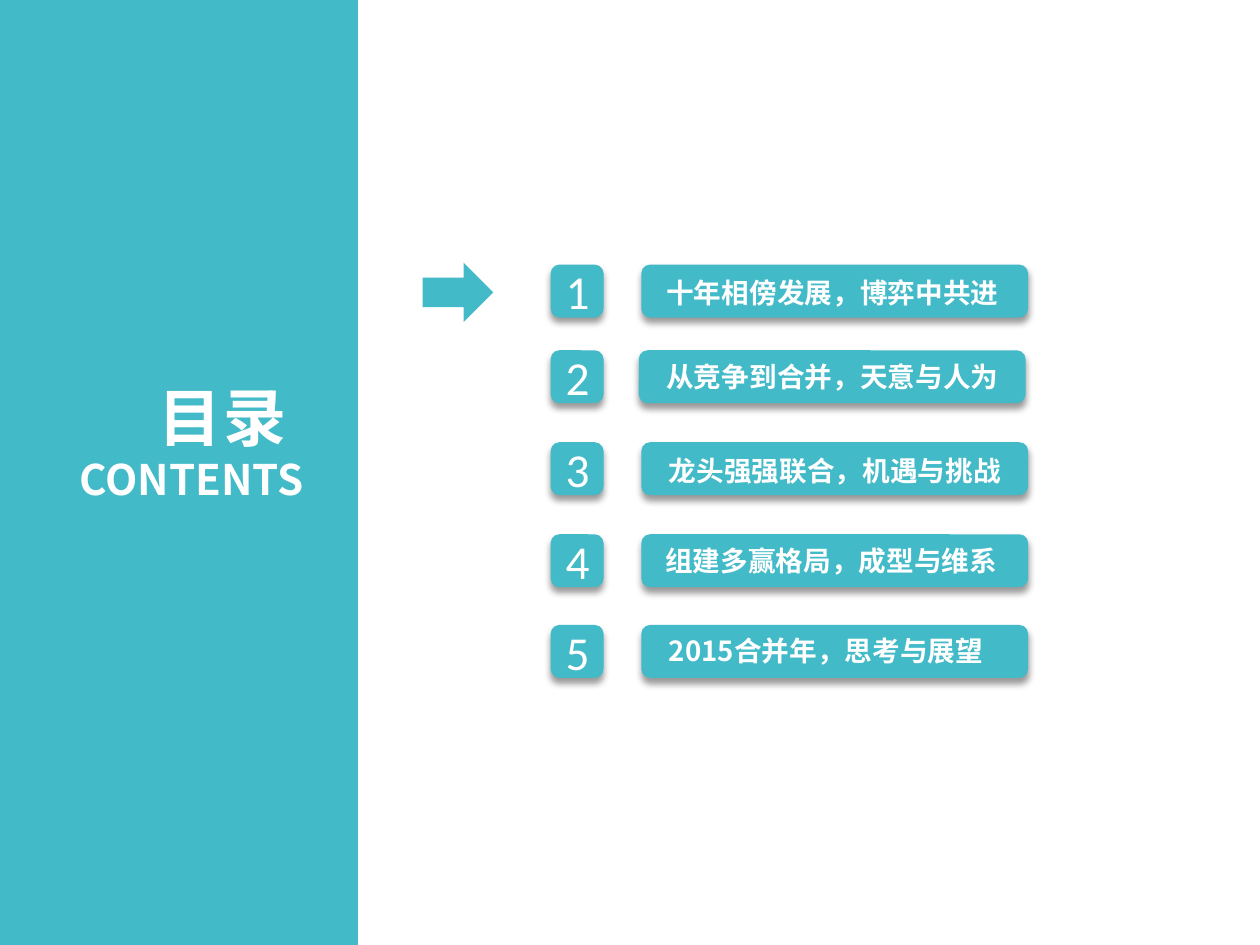
from dataclasses import dataclass

import lxml.etree
import pptx
import pptx.dml.color
import pptx.enum.shapes
import pptx.enum.text
import pptx.oxml.ns
import pptx.util

Inches = pptx.util.Inches
Shape = pptx.enum.shapes.MSO_SHAPE
Align = pptx.enum.text.PP_ALIGN
Anchor = pptx.enum.text.MSO_ANCHOR
Fit = pptx.enum.text.MSO_AUTO_SIZE
qn = pptx.oxml.ns.qn

TEAL = pptx.dml.color.RGBColor(0x42, 0xBA, 0xC8)
WHITE = pptx.dml.color.RGBColor(0xFF, 0xFF, 0xFF)
HAN = "Noto Sans CJK SC"
SIDE = 0.42


@dataclass
class Row:
    label: str
    top: float
    left: float
    inset: float
    drop: float
    width: float


ROWS = [
    Row("十年相傍发展，博弈中共进", 2.1, 5.09, 0.1, 0.04, 2.91),
    Row("从竞争到合并，天意与人为", 2.78, 5.07, 0.12, 0.03, 2.85),
    Row("龙头强强联合，机遇与挑战", 3.51, 5.09, 0.12, 0.04, 3.05),
    Row("组建多赢格局，成型与维系", 4.24, 5.09, 0.09, 0.03, 2.86),
    Row("2015合并年，思考与展望", 4.96, 5.09, 0.12, 0.02, 2.86),
]


def write(para, text: str, *, size: float, font: str = HAN, bold: bool = True,
          align=Align.LEFT, track: float = 0) -> None:
    para.alignment = align
    run = para.add_run()
    run.text = text
    run.font.size = pptx.util.Pt(size)
    run.font.bold = bold
    run.font.name = font
    run.font.color.rgb = WHITE
    props = run._r.get_or_add_rPr()
    props.set("spc", str(round(track * 100)))
    lxml.etree.SubElement(props, qn("a:ea"), typeface=font)


def block(shapes, kind, left: float, top: float, width: float, height: float):
    shape = shapes.add_shape(kind, Inches(left), Inches(top), Inches(width), Inches(height))
    shape.shadow.inherit = False
    shape.fill.solid()
    shape.fill.fore_color.rgb = TEAL
    shape.line.fill.background()
    return shape


def tile(shapes, left: float, top: float, width: float):
    shape = block(shapes, Shape.ROUNDED_RECTANGLE, left, top, width, SIDE)
    effects = shape._element.spPr.find(qn("a:effectLst"))
    shade = lxml.etree.SubElement(
        effects, qn("a:outerShdw"), blurRad=str(pptx.util.Pt(4)),
        dist=str(pptx.util.Pt(3)), dir="5400000", algn="t", rotWithShape="0")
    color = lxml.etree.SubElement(shade, qn("a:srgbClr"), val="000000")
    lxml.etree.SubElement(color, qn("a:alpha"), val="40000")
    return shape


def entry(shapes, number: int, row: Row) -> None:
    badge = tile(shapes, 4.37, row.top, SIDE).text_frame
    badge.vertical_anchor = Anchor.MIDDLE
    write(badge.paragraphs[0], str(number), size=27, font="Calibri", bold=False,
          align=Align.CENTER)
    group = shapes.add_group_shape().shapes
    tile(group, row.left, row.top, 3.07)
    frame = group.add_textbox(Inches(row.left + row.inset), Inches(row.top + row.drop),
                              Inches(row.width), Inches(0.37)).text_frame
    frame.word_wrap = True
    frame.auto_size = Fit.SHAPE_TO_FIT_TEXT
    write(frame.paragraphs[0], row.label, size=15.8)


def head(slide) -> None:
    title = slide.shapes.title
    slide.shapes._spTree.append(title._element)
    title.left, title.top = Inches(0.21), Inches(2.95)
    title.width, title.height = Inches(2.3), Inches(1.11)
    frame = title.text_frame
    frame.word_wrap = True
    frame.auto_size = Fit.SHAPE_TO_FIT_TEXT
    frame.vertical_anchor = Anchor.TOP
    write(frame.paragraphs[0], "目录 ", size=36, align=Align.RIGHT, track=1.5)
    write(frame.add_paragraph(), "CONTENTS", size=24, align=Align.RIGHT)


def main() -> None:
    deck = pptx.Presentation()
    deck.slide_width, deck.slide_height = Inches(10), Inches(7.5)
    slide = deck.slides.add_slide(deck.slide_layouts[5])
    block(slide.shapes, Shape.RECTANGLE, 0, 0, 2.84, 7.5)
    head(slide)
    for number, row in enumerate(ROWS, 1):
        entry(slide.shapes, number, row)
    arrow = block(slide.shapes, Shape.DOWN_ARROW, 3.4, 2.04, 0.47, 0.56)
    arrow.rotation = 270
    deck.save("out.pptx")


if __name__ == "__main__":
    main()
